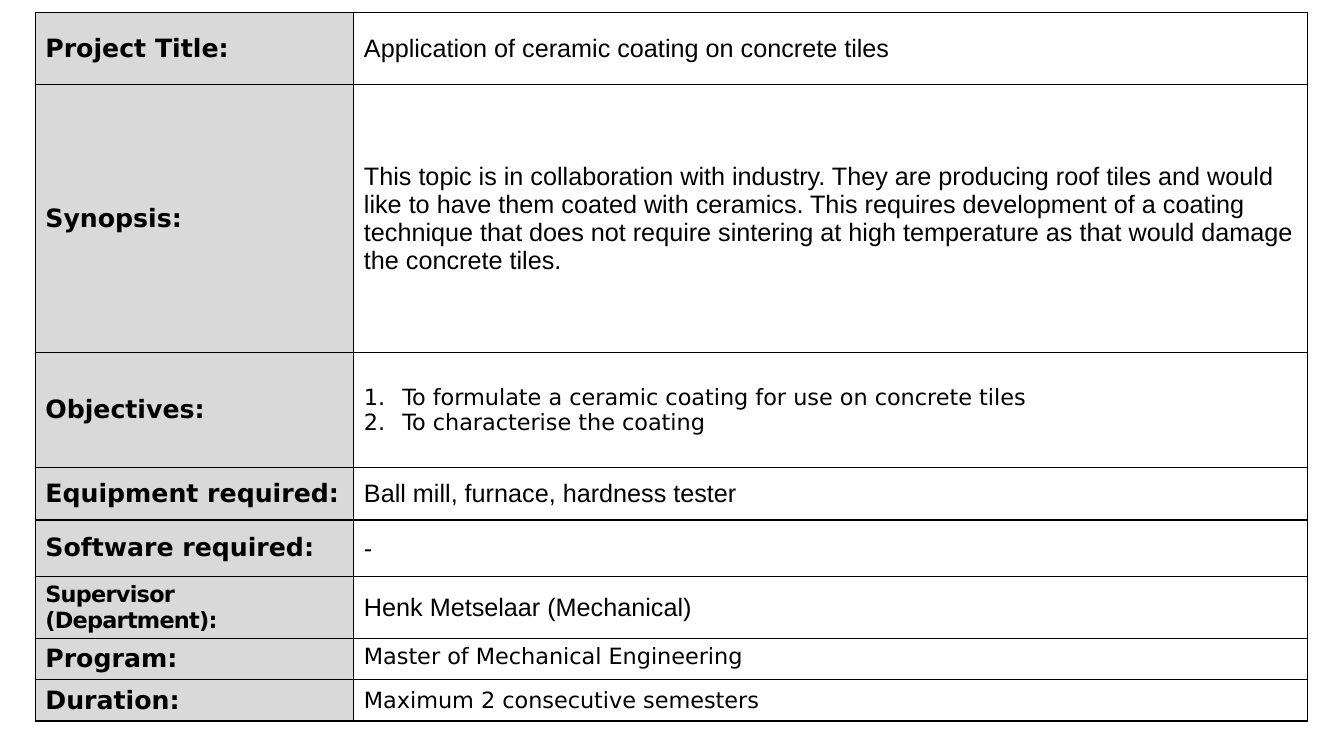
from lxml.etree import SubElement
from pptx import Presentation
from pptx.dml.color import RGBColor
from pptx.enum.text import MSO_ANCHOR
from pptx.oxml.ns import qn
from pptx.util import Inches, Pt

BLACK = RGBColor(0x00, 0x00, 0x00)
LABEL_GREY = RGBColor(0xD9, 0xD9, 0xD9)
WHITE = RGBColor(0xFF, 0xFF, 0xFF)

LABEL = {"name": "DejaVu Sans", "size": Pt(18), "bold": True}
SMALL_LABEL = {**LABEL, "size": Pt(16)}
DETAIL = {"name": "Arial", "size": Pt(18), "bold": False}
SMALL_DETAIL = {"name": "DejaVu Sans", "size": Pt(16), "bold": False}

COLUMN_WIDTHS = (3.16, 9.46)
PROJECT_ROWS = [
    (0.72, "Project Title:", LABEL,
     ["Application of ceramic coating on concrete tiles"], DETAIL),
    (2.66, "Synopsis:", LABEL,
     ["This topic is in collaboration with industry. They are producing roof tiles "
      "and would like to have them coated with ceramics. This requires development "
      "of a coating technique that does not require sintering at high temperature "
      "as that would damage the concrete tiles."], DETAIL),
    (1.14, "Objectives:", LABEL,
     ["To formulate a ceramic coating for use on concrete tiles",
      "To characterise the coating"], SMALL_DETAIL),
    (0.52, "Equipment required:", LABEL,
     ["Ball mill, furnace, hardness tester"], DETAIL),
    (0.56, "Software required:", LABEL, ["-"], DETAIL),
    (0.61, "Supervisor (Department):", SMALL_LABEL,
     ["Henk Metselaar (Mechanical)"], DETAIL),
    (0.41, "Program:", LABEL, ["Master of Mechanical Engineering"], SMALL_DETAIL),
    (0.41, "Duration:", LABEL, ["Maximum 2 consecutive semesters"], SMALL_DETAIL),
]


def add_borders(cell):
    """Draw a thin black line on all four sides of a cell."""
    properties = cell._tc.get_or_add_tcPr()
    for side in ("a:lnL", "a:lnR", "a:lnT", "a:lnB"):
        border = SubElement(properties, qn(side), w=str(Pt(0.96)))
        colour = SubElement(border, qn("a:solidFill"))
        SubElement(colour, qn("a:srgbClr"), val=str(BLACK))


def number_paragraph(paragraph):
    """Give a paragraph an automatic number and a hanging indent."""
    properties = paragraph._p.get_or_add_pPr()
    properties.set("marL", str(Inches(0.38)))
    properties.set("indent", str(Inches(-0.38)))
    SubElement(properties, qn("a:buFont"), typeface="+mj-lt")
    SubElement(properties, qn("a:buAutoNum"), type="arabicPeriod")


def fill_cell(cell, lines, font_format, background):
    """Write the lines into a bordered cell, numbering them when several."""
    add_borders(cell)
    cell.fill.solid()
    cell.fill.fore_color.rgb = background
    cell.vertical_anchor = MSO_ANCHOR.MIDDLE
    cell.text = "\n".join(lines)
    for paragraph in cell.text_frame.paragraphs:
        if len(lines) > 1:
            number_paragraph(paragraph)
        for run in paragraph.runs:
            run.font.color.rgb = BLACK
            for attribute, value in font_format.items():
                setattr(run.font, attribute, value)
            if font_format is SMALL_LABEL:
                run._r.get_or_add_rPr().set("spc", "-50")


def add_project_table(slide):
    """Add the table of project labels and details."""
    height = sum(row[0] for row in PROJECT_ROWS)
    project = slide.shapes.add_table(
        len(PROJECT_ROWS), len(COLUMN_WIDTHS), Inches(0.35), Inches(0.12),
        Inches(sum(COLUMN_WIDTHS)), Inches(height)).table
    for option, value in {"first_row": False, "horz_banding": False}.items():
        setattr(project, option, value)
    for column, width in zip(project.columns, COLUMN_WIDTHS):
        column.width = Inches(width)
    for row, content in zip(project.rows, PROJECT_ROWS):
        row_height, label, label_format, details, detail_format = content
        row.height = Inches(row_height)
        fill_cell(row.cells[0], [label], label_format, LABEL_GREY)
        fill_cell(row.cells[1], details, detail_format, WHITE)
        if label == "Program:":
            row.cells[1].vertical_anchor = MSO_ANCHOR.TOP


def main():
    """Build the project slide and save it."""
    presentation = Presentation()
    presentation.slide_width = Inches(13.33)
    presentation.slide_height = Inches(7.5)
    slide = presentation.slides.add_slide(presentation.slide_layouts[6])
    add_project_table(slide)
    presentation.save("out.pptx")


if __name__ == "__main__":
    main()
